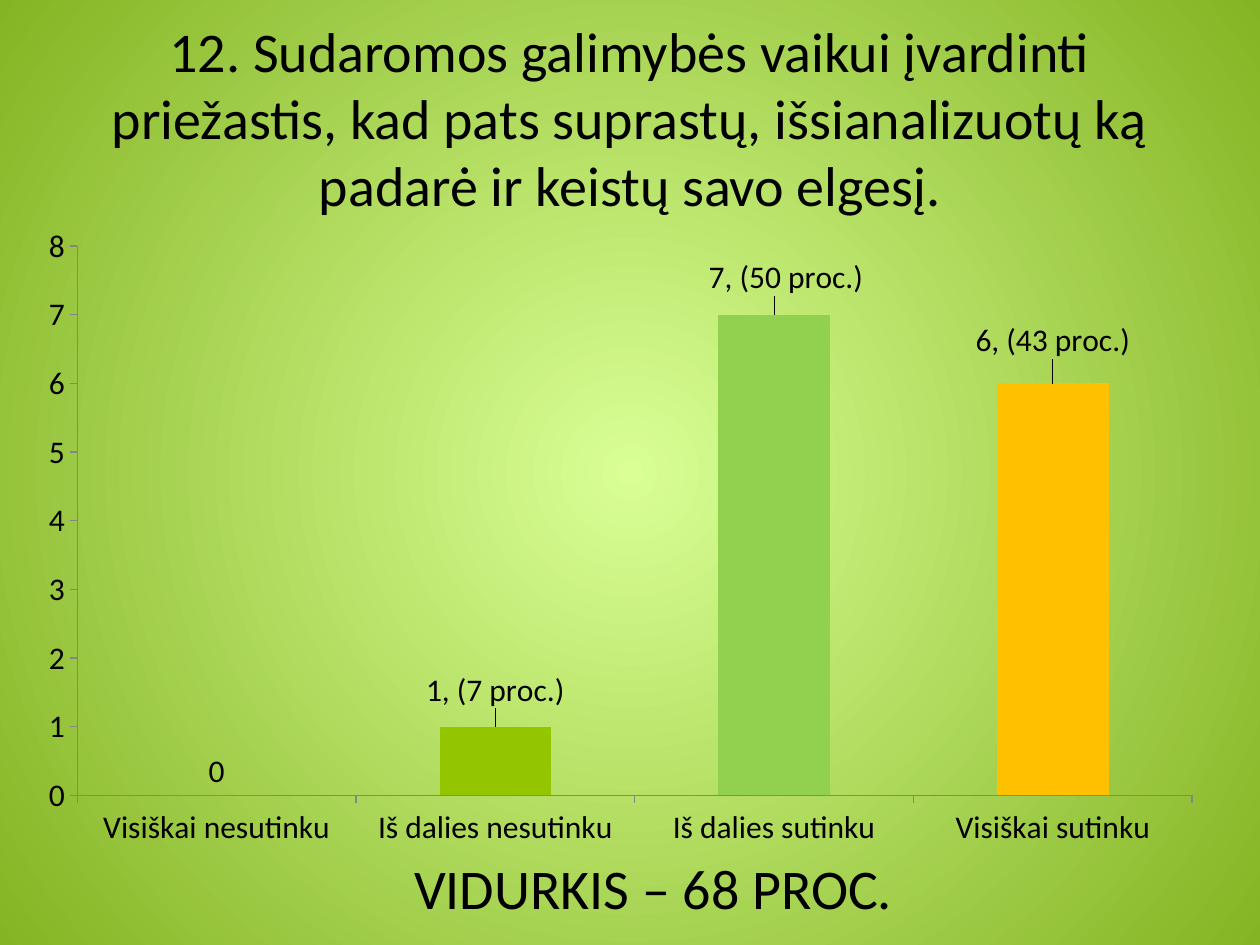
from lxml.etree import SubElement
from pptx import Presentation
from pptx.chart.data import CategoryChartData
from pptx.dml.color import RGBColor
from pptx.enum.chart import XL_CHART_TYPE, XL_LABEL_POSITION, XL_TICK_MARK
from pptx.enum.text import MSO_ANCHOR, PP_ALIGN
from pptx.oxml import parse_xml
from pptx.oxml.ns import nsdecls, qn
from pptx.util import Pt

PX = 914400 // 126
FONT = "Calibri"
BLACK = "000000"

# answer, count, bar colour, label text, label shift (fractions of the chart)
ANSWERS = [
    ("Visiškai nesutinku", 0, "94C600", None, None),
    ("Iš dalies nesutinku", 1, "94C600", "1, (7 proc.)", (0, -0.02)),
    ("Iš dalies sutinku", 7, "92D050", "7, (50 proc.)", (0.01, -0.02)),
    ("Visiškai sutinku", 6, "FFC000", "6, (43 proc.)", (0, -0.03)),
]


def px(*lengths):
    return [length * PX for length in lengths]


def color(hex_value):
    return RGBColor.from_string(hex_value)


def style_font(font, size):
    font.name = FONT
    font.size = Pt(size)
    font.bold = False
    font.color.rgb = color(BLACK)


def paint_background(slide, center, edge):
    fill = slide.background.fill
    fill.gradient()
    for stop, shade in zip(fill.gradient_stops, (center, edge)):
        stop.color.rgb = color(shade)
    fill.gradient_stops[0].position = 0
    fill.gradient_stops[1].position = 1
    # Radial instead of linear
    linear = slide.background._cSld.find(".//" + qn("a:lin"))
    linear.getparent().replace(linear, parse_xml(
        f'<a:path {nsdecls("a")} path="circle">'
        '<a:fillToRect l="50000" t="50000" r="50000" b="50000"/></a:path>'))


def add_heading(slide, box, text, anchor):
    frame = slide.shapes.add_textbox(*px(*box)).text_frame
    frame.word_wrap = True
    frame.vertical_anchor = anchor
    heading = frame.paragraphs[0]
    heading.text = text
    heading.alignment = PP_ALIGN.CENTER
    style_font(heading.font, 32)


def label_bar(point, text, shift):
    label = point.data_label
    paragraph = label.text_frame.paragraphs[0]
    run = paragraph.add_run()
    run.text = text
    style_font(run.font, 18)
    label.position = XL_LABEL_POSITION.OUTSIDE_END
    # Shift away from the default place
    entry = label._get_or_add_dLbl()
    for old in entry.findall(qn("c:layout")):
        entry.remove(old)
    layout = parse_xml(f'<c:layout {nsdecls("c")}/>')
    manual = SubElement(layout, qn("c:manualLayout"))
    for axis, offset in zip("xy", shift):
        SubElement(manual, qn(f"c:{axis}"), val=str(offset))
    entry.find(qn("c:idx")).addnext(layout)


def add_answer_chart(slide, box):
    data = CategoryChartData()
    data.categories = [answer[0] for answer in ANSWERS]
    data.add_series("Series 1", [answer[1] for answer in ANSWERS])
    chart = slide.shapes.add_chart(
        XL_CHART_TYPE.COLUMN_CLUSTERED, *px(*box), data).chart
    chart.has_legend = False
    chart.has_title = False
    style_font(chart.font, 18)

    # Axes
    for axis in (chart.category_axis, chart.value_axis):
        axis.has_major_gridlines = False
        axis.major_tick_mark = XL_TICK_MARK.OUTSIDE
        axis.minor_tick_mark = XL_TICK_MARK.NONE
        axis.format.line.color.rgb = color("868686")
    chart.value_axis.minimum_scale = 0
    chart.value_axis.maximum_scale = 8
    chart.value_axis.major_unit = 1

    # Bars and their labels
    plot = chart.plots[0]
    plot.gap_width = 150
    plot.vary_by_categories = False
    counts = plot.series[0]
    counts.invert_if_negative = False
    counts.format.fill.solid()
    counts.format.fill.fore_color.rgb = color(ANSWERS[0][2])
    counts.data_labels.show_value = True
    counts.data_labels.position = XL_LABEL_POSITION.OUTSIDE_END
    for index, (_, _, shade, text, shift) in enumerate(ANSWERS):
        point = counts.points[index]
        if shade != ANSWERS[0][2]:
            point.format.fill.solid()
            point.format.fill.fore_color.rgb = color(shade)
        if text:
            label_bar(point, text, shift)


def main():
    deck = Presentation()
    deck.slide_width, deck.slide_height = px(1260, 945)
    slide = deck.slides.add_slide(deck.slide_layouts[6])
    paint_background(slide, "D9FF95", "84B423")
    add_heading(
        slide, (63, 38, 1134, 158),
        "12. Sudaromos galimybės vaikui įvardinti priežastis, kad pats "
        "suprastų, išsianalizuotų ką padarė ir keistų savo elgesį.",
        MSO_ANCHOR.MIDDLE)
    add_answer_chart(slide, (25, 214, 1191, 645))
    add_heading(slide, (113, 847, 1081, 81), "VIDURKIS – 68 PROC.", MSO_ANCHOR.TOP)
    deck.save("out.pptx")


if __name__ == "__main__":
    main()
